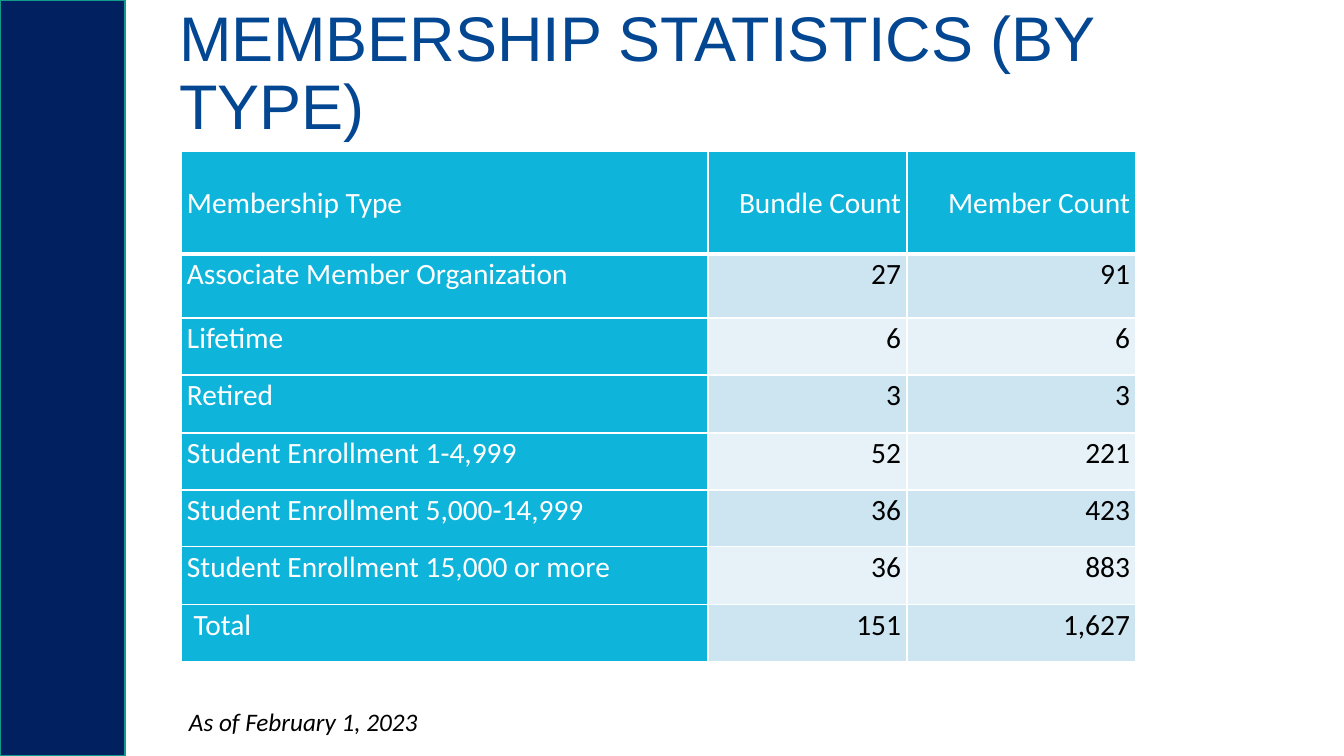
"""Build the membership statistics slide."""
import dataclasses
import typing

import lxml.etree
import pptx
import pptx.dml.color
import pptx.enum.shapes
import pptx.enum.text
import pptx.oxml.ns
import pptx.util

ALIGN = pptx.enum.text.PP_ALIGN
ANCHOR = pptx.enum.text.MSO_ANCHOR
AUTO_SIZE = pptx.enum.text.MSO_AUTO_SIZE


@dataclasses.dataclass(frozen=True)
class Theme:
    navy: str = "002060"
    teal: str = "109B8A"
    title: str = "034793"
    cyan: str = "0FB4DB"
    bands: tuple[str, str] = ("CCE5F1", "E7F2F8")
    white: str = "FFFFFF"
    black: str = "000000"
    title_font: str = "Arial"
    body_font: str = "Calibri"
    title_size: int = 45
    table_size: int = 21
    note_size: int = 18


class Box(typing.NamedTuple):
    left: int
    top: int
    width: int
    height: int


class Membership(typing.NamedTuple):
    kind: str
    bundles: str
    members: str
    height: int


THEME = Theme()
SLIDE = Box(0, 0, 1344, 756)
SIDEBAR = Box(0, 0, 125, 756)
TITLE = Box(179, 37, 1117, 111)
TABLE = Box(181, 151, 955, 511)
NOTE = Box(179, 701, 410, 40)
COLUMNS = (527, 199, 229)
CELL_INSET = 6
ROWS = (
    Membership("Membership Type", "Bundle Count", "Member Count", 103),
    Membership("Associate Member Organization", "27", "91", 64),
    Membership("Lifetime", "6", "6", 57),
    Membership("Retired", "3", "3", 58),
    Membership("Student Enrollment 1-4,999", "52", "221", 57),
    Membership("Student Enrollment 5,000-14,999", "36", "423", 57),
    Membership("Student Enrollment 15,000 or more", "36", "883", 58),
    Membership(" Total", "151", "1,627", 57),
)


def px(n: int) -> int:
    """Turn px into EMU."""
    return round(n * 914400 / 100.8)


def place(box: Box) -> list[int]:
    """Return the box in EMU."""
    return [px(n) for n in box]


def rgb(color: str) -> pptx.dml.color.RGBColor:
    """Return the colour object for a hex value."""
    return pptx.dml.color.RGBColor.from_string(color)


def write(tf, text: str, font: str, size: int, color: str, align=ALIGN.LEFT,
          spacing: float = 1.0, italic: bool = False) -> None:
    """Fill a text frame with one formatted paragraph."""
    tf.text = text
    p = tf.paragraphs[0]
    p.alignment = align
    p.line_spacing = spacing
    r = p.runs[0]
    r.font.name = font
    r.font.size = pptx.util.Pt(size)
    r.font.color.rgb = rgb(color)
    r.font.bold = False
    r.font.italic = italic


def add_borders(cell, bottom: int) -> None:
    """Draw white borders, 1 pt except for the bottom one."""
    tc_pr = cell._tc.get_or_add_tcPr()
    for i, (side, width) in enumerate(zip("LRTB", (1, 1, 1, bottom))):
        ln = lxml.etree.Element(pptx.oxml.ns.qn(f"a:ln{side}"), w=str(pptx.util.Pt(width)))
        fill = lxml.etree.SubElement(ln, pptx.oxml.ns.qn("a:solidFill"))
        lxml.etree.SubElement(fill, pptx.oxml.ns.qn("a:srgbClr"), val=THEME.white)
        tc_pr.insert(i, ln)


def add_sidebar(s) -> None:
    """Draw the navy band on the left."""
    sp = s.shapes.add_shape(pptx.enum.shapes.MSO_SHAPE.RECTANGLE, *place(SIDEBAR))
    sp.shadow.inherit = False
    sp.fill.solid()
    sp.fill.fore_color.rgb = rgb(THEME.navy)
    sp.line.color.rgb = rgb(THEME.teal)
    sp.line.width = pptx.util.Pt(1)


def set_title(s) -> None:
    """Move and format the title placeholder."""
    sp = s.shapes.title
    sp.left, sp.top, sp.width, sp.height = place(TITLE)
    tf = sp.text_frame
    tf.word_wrap = True
    tf.auto_size = AUTO_SIZE.NONE
    tf.vertical_anchor = ANCHOR.BOTTOM
    tf.margin_left, tf.margin_right = 0, px(10)
    tf.margin_top = tf.margin_bottom = px(5)
    write(tf, "MEMBERSHIP STATISTICS (BY TYPE)", THEME.title_font,
          THEME.title_size, THEME.title, spacing=0.9)


def add_membership_table(s) -> None:
    """Draw the membership counts."""
    table = s.shapes.add_table(len(ROWS), len(COLUMNS), *place(TABLE)).table
    table.first_col = True
    for column, width in zip(table.columns, COLUMNS):
        column.width = px(width)
    for i, row in enumerate(ROWS):
        table.rows[i].height = px(row.height)
        for j, text in enumerate((row.kind, row.bundles, row.members)):
            cell = table.cell(i, j)
            heading = i == 0 or j == 0
            cell.fill.solid()
            cell.fill.fore_color.rgb = rgb(THEME.cyan if heading else THEME.bands[(i - 1) % 2])
            cell.margin_left = cell.margin_right = px(CELL_INSET)
            cell.margin_top = cell.margin_bottom = 0
            cell.vertical_anchor = ANCHOR.MIDDLE if i == 0 else ANCHOR.TOP
            add_borders(cell, 3 if i == 0 else 1)
            write(cell.text_frame, text, THEME.body_font, THEME.table_size,
                  THEME.white if heading else THEME.black,
                  ALIGN.RIGHT if j else ALIGN.LEFT, 1.07)


def add_note(s) -> None:
    """Write the date of the figures."""
    tf = s.shapes.add_textbox(*place(NOTE)).text_frame
    tf.word_wrap = True
    tf.auto_size = AUTO_SIZE.SHAPE_TO_FIT_TEXT
    write(tf, "As of February 1, 2023", THEME.body_font, THEME.note_size,
          THEME.black, italic=True)


def main() -> None:
    """Build and save the deck."""
    prs = pptx.Presentation()
    prs.slide_width, prs.slide_height = px(SLIDE.width), px(SLIDE.height)
    s = prs.slides.add_slide(prs.slide_layouts[5])
    add_sidebar(s)
    set_title(s)
    add_membership_table(s)
    add_note(s)
    prs.save("out.pptx")


if __name__ == "__main__":
    main()
